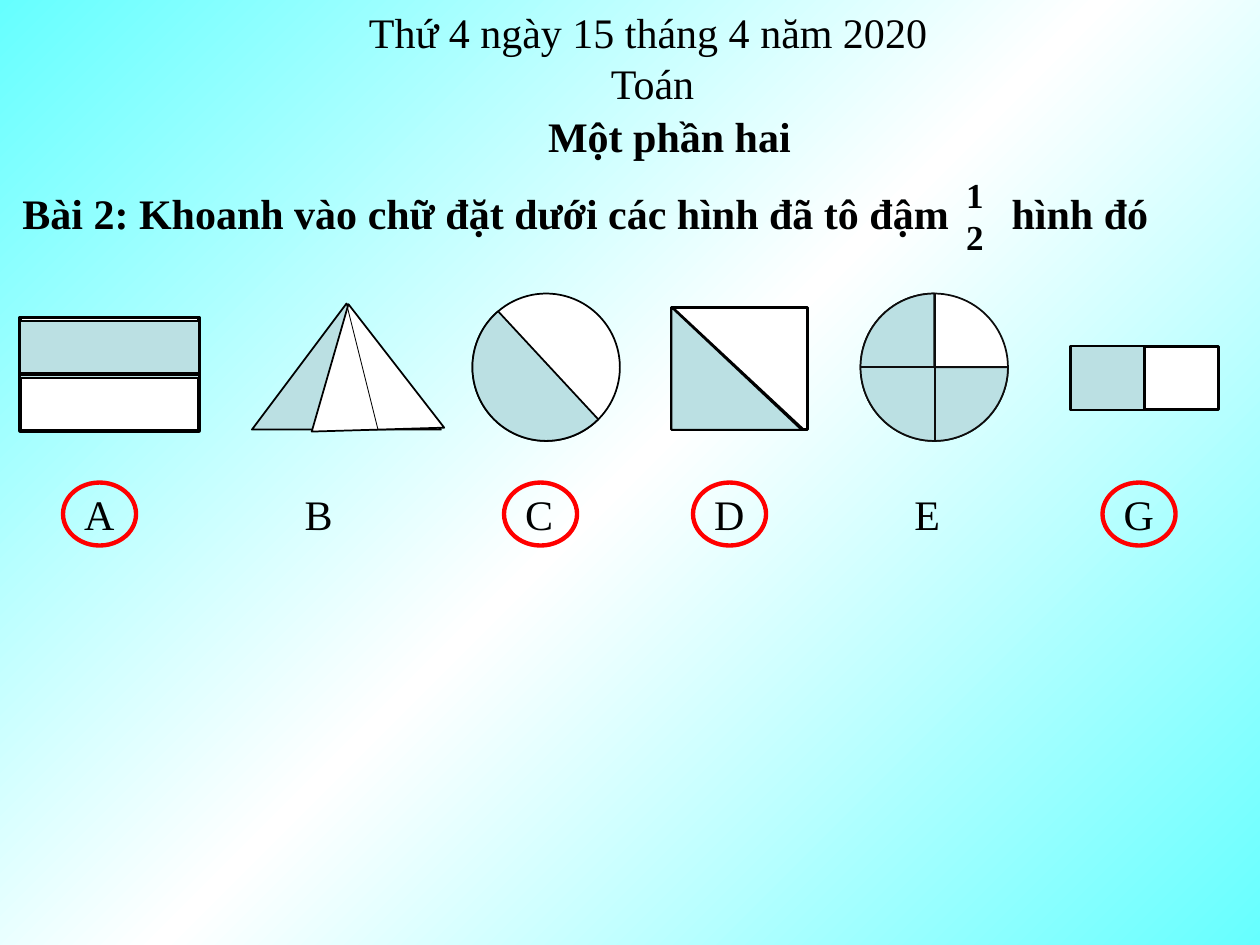
from copy import deepcopy

from lxml import etree
from pptx import Presentation
from pptx.dml.color import RGBColor
from pptx.enum import shapes, text
from pptx.oxml.ns import qn
from pptx.util import Inches, Pt

COLORS = {
    "aqua": "66FFFF",
    "white": "FFFFFF",
    "shade": "BBE0E3",
    "black": "000000",
    "soft_black": "0D0D0D",
    "red": "FF0000",
}
KIND = shapes.MSO_SHAPE


def rgb(name):
    return RGBColor.from_string(COLORS[name])


class Worksheet:
    """Holds the text style and the slide being filled."""

    font = {"name": "Times New Roman", "size": Pt(24), "bold": False}

    def __init__(self, slide):
        self.slide = slide

    def background(self, stops, angle):
        fill = self.slide.background.fill
        fill.gradient()
        fill.gradient_angle = angle
        stop_list = self.slide.element.xpath(".//a:gsLst")[0]
        while len(stop_list) < len(stops):
            stop_list.append(deepcopy(stop_list[-1]))
        for stop, (position, color) in zip(fill.gradient_stops, stops):
            stop.position = position
            stop.color.rgb = rgb(color)

    def set_text(self, shape, lines, wrap, **style):
        frame = shape.text_frame
        frame_format = {
            "word_wrap": wrap,
            "auto_size": text.MSO_AUTO_SIZE.SHAPE_TO_FIT_TEXT,
            "vertical_anchor": text.MSO_ANCHOR.TOP,
        }
        for name, value in frame_format.items():
            setattr(frame, name, value)
        frame.text = lines
        for paragraph in frame.paragraphs:
            paragraph.alignment = text.PP_ALIGN.LEFT
            for run in paragraph.runs:
                for name, value in {**self.font, **style}.items():
                    setattr(run.font, name, value)
                run.font.color.rgb = rgb("black")
        return shape

    def title(self, words, left, top, width, height):
        shape = self.slide.shapes.title
        box = {"left": left, "top": top, "width": width, "height": height}
        for name, value in box.items():
            setattr(shape, name, Inches(value))
        return self.set_text(shape, words, False, bold=True)

    def label(self, lines, left, top, width, height=0.5, wrap=False, **style):
        shape = self.slide.shapes.add_textbox(*map(Inches, (left, top, width, height)))
        return self.set_text(shape, lines, wrap, **style)

    def figure(self, kind, left, top, width, height, fill=None, line="black",
               weight=1, rotation=0, adjustments=()):
        shape = self.slide.shapes.add_shape(
            kind, *map(Inches, (left, top, width, height)))
        shape.shadow.inherit = False
        shape.rotation = rotation
        for index, value in enumerate(adjustments):
            shape.adjustments[index] = value
        if fill:
            shape.fill.solid()
            shape.fill.fore_color.rgb = rgb(fill)
        else:
            shape.fill.background()
        shape.line.color.rgb = rgb(line)
        shape.line.width = Pt(weight)
        return shape

    def line(self, x1, y1, x2, y2, color="black", weight=1):
        connector = self.slide.shapes.add_connector(
            shapes.MSO_CONNECTOR.STRAIGHT, *map(Inches, (x1, y1, x2, y2)))
        connector.line.color.rgb = rgb(color)
        connector.line.width = Pt(weight)
        etree.SubElement(connector.element.spPr, qn("a:effectLst"))
        return connector

    def divider(self, rectangle, start_side, end_side, weight=2):
        connector = self.line(0, 0, 0, 0, weight=weight)
        connector.begin_connect(rectangle, start_side)
        connector.end_connect(rectangle, end_side)


def main():
    presentation = Presentation()
    presentation.slide_width, presentation.slide_height = Inches(10), Inches(7.5)
    slide = presentation.slides.add_slide(presentation.slide_layouts[5])
    sheet = Worksheet(slide)
    sheet.background([(0, "aqua"), (0.5, "white"), (1, "aqua")], 315)

    # Date, subject and lesson title
    sheet.label("Toán", 4.75, 0.41, 0.87)
    sheet.label("Thứ 4 ngày 15 tháng 4 năm 2020", 2.83, 0, 4.67)
    sheet.title("Một phần hai", 4.25, 0.83, 2.15, 0.5)

    # Exercise, with a tab leaving room for the fraction
    exercise = sheet.label(
        "Bài 2: Khoanh vào chữ đặt dưới các hình đã tô đậm\thình đó",
        0.08, 1.44, 9.42, wrap=True, bold=True)
    properties = exercise.text_frame.paragraphs[0]._p.get_or_add_pPr()
    tabs = etree.SubElement(properties, qn("a:tabLst"))
    etree.SubElement(tabs, qn("a:tab"), pos=str(Inches(7.85)), algn="l")
    sheet.label("1\n2", 7.57, 1.33, 0.34, 0.77, bold=True, size=Pt(20))

    # A: rectangle, upper half shaded
    whole = sheet.figure(KIND.RECTANGLE, 0.16, 2.52, 1.42, 0.9, "white", weight=2)
    sheet.figure(KIND.RECTANGLE, 0.16, 2.55, 1.42, 0.45, "shade")
    sheet.divider(whole, 3, 1)

    # B: triangle in three parts, one shaded
    sheet.figure(KIND.FLOWCHART_EXTRACT, 2, 2.41, 1.5, 1, "shade")
    sheet.figure(KIND.FLOWCHART_MERGE, 2.19, 2.74, 1.24, 0.85, "white", rotation=52.2)
    sheet.line(2.75, 2.41, 3, 3.41, weight=0.5)

    # C: circle cut along a diameter
    circle = (3.75, 2.33, 1.17, 1.17)
    sheet.figure(KIND.OVAL, *circle, "white")
    sheet.figure(KIND.CHORD, *circle, "shade", adjustments=(27, 137.6))

    # D: rectangle cut along its diagonal
    sheet.figure(KIND.RECTANGLE, 5.33, 2.44, 1.08, 0.97, "white", weight=2)
    sheet.line(5.33, 2.44, 6.37, 3.41, weight=2)
    sheet.figure(KIND.ISOSCELES_TRIANGLE, 5.33, 2.44, 1.03, 0.97, "shade",
                 adjustments=(0,))

    # E: circle in quarters, three shaded
    circle = (6.83, 2.33, 1.17, 1.17)
    sheet.figure(KIND.OVAL, *circle, "white", "soft_black")
    sheet.figure(KIND.PIE, *circle, "shade", "soft_black")
    sheet.line(6.83, 2.91, 8, 2.91, "soft_black")
    sheet.line(7.42, 2.33, 7.42, 3.5, "soft_black")

    # G: rectangle, left half shaded
    whole = sheet.figure(KIND.RECTANGLE, 8.5, 2.75, 1.17, 0.5, "white", weight=2)
    sheet.figure(KIND.RECTANGLE, 8.5, 2.75, 0.58, 0.5, "shade")
    sheet.divider(whole, 0, 2)

    # Letters, with the right answers circled
    answers = [("A", 0.57, True), ("B", 2.32, False), ("C", 4.07, True),
               ("D", 5.57, True), ("E", 7.16, False), ("G", 8.82, True)]
    for letter, left, correct in answers:
        if correct:
            sheet.figure(KIND.OVAL, left - 0.07, 3.83, 0.58, 0.5,
                         line="red", weight=2.5)
        sheet.label(letter, left, 3.83, 0.44, wrap=True)

    presentation.save("out.pptx")


if __name__ == "__main__":
    main()
